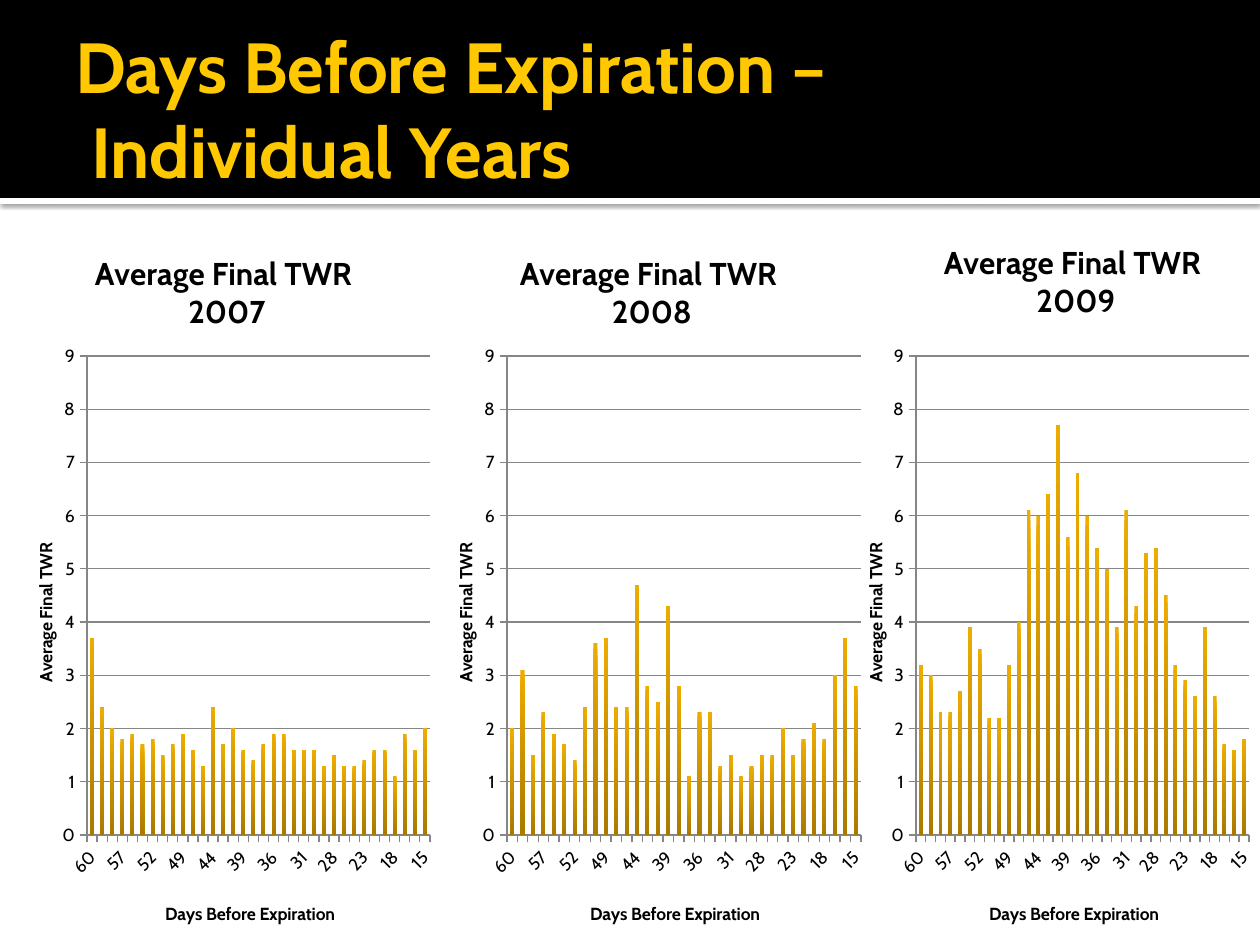
"""Builds a slide with three yearly column charts of average final TWR by days before expiration."""
import pptx
import pptx.chart.data
import pptx.dml.color
import pptx.enum.chart
import pptx.enum.shapes
import pptx.enum.text
import pptx.oxml
import pptx.oxml.ns
import pptx.util

PX = 914400 // 126
FONT = "Cabin"
BLACK, WHITE, YELLOW, GRAY = "000000", "FFFFFF", "FFC800", "868686"
BAR_TOP, BAR_BOTTOM = "EDAC00", "AA7A00"
NAMESPACES = pptx.oxml.ns.nsdecls("a", "c")

HEADING = "Days Before Expiration –\v Individual Years"
CATEGORY_TITLE, VALUE_TITLE = "Days Before Expiration", "Average Final TWR"
DAYS = [60, 59, 58, 57, 56, 53, 52, 51, 50, 49, 46, 45, 44, 43, 42, 39, 38,
        37, 36, 35, 32, 31, 30, 29, 28, 25, 24, 23, 22, 21, 18, 17, 16, 15]
CHART_TOP, CHART_HEIGHT = 220, 725
PLOT_TOP, PLOT_HEIGHT = 356, 479
VALUE_TITLE_TOP, CATEGORY_TITLE_TOP = 540, 898

CHARTS = [
    {"year": 2009, "left": 829, "width": 431, "plot": (916, 333),
     "title": (940, 238), "value_title": 860, "category_title": 986,
     "values": [3.2, 3, 2.3, 2.3, 2.7, 3.9, 3.5, 2.2, 2.2, 3.2, 4, 6.1, 6, 6.4, 7.7, 5.6, 6.8,
                6, 5.4, 5, 3.9, 6.1, 4.3, 5.3, 5.4, 4.5, 3.2, 2.9, 2.6, 3.9, 2.6, 1.7, 1.6, 1.8]},
    {"year": 2008, "left": 420, "width": 451, "plot": (507, 354),
     "title": (516, 249), "value_title": 450, "category_title": 587,
     "values": [2, 3.1, 1.5, 2.3, 1.9, 1.7, 1.4, 2.4, 3.6, 3.7, 2.4, 2.4, 4.7, 2.8, 2.5, 4.3, 2.8,
                1.1, 2.3, 2.3, 1.3, 1.5, 1.1, 1.3, 1.5, 1.5, 2, 1.5, 1.8, 2.1, 1.8, 3, 3.7, 2.8]},
    {"year": 2007, "left": 0, "width": 441, "plot": (87, 343),
     "title": (91, 249), "value_title": 30, "category_title": 162,
     "values": [3.7, 2.4, 2, 1.8, 1.9, 1.7, 1.8, 1.5, 1.7, 1.9, 1.6, 1.3, 2.4, 1.7, 2, 1.6, 1.4,
                1.7, 1.9, 1.9, 1.6, 1.6, 1.6, 1.3, 1.5, 1.3, 1.3, 1.4, 1.6, 1.6, 1.1, 1.9, 1.6, 2]},
]


def color(value):
    return pptx.dml.color.RGBColor.from_string(value)


def box(*lengths):
    return [length * PX for length in lengths]


def style(font, size, bold):
    font.name, font.size, font.bold = FONT, pptx.util.Pt(size), bold
    font.color.rgb = color(BLACK)


def add_band(slide, top, height, fill):
    band = slide.shapes.add_shape(pptx.enum.shapes.MSO_SHAPE.RECTANGLE, *box(0, top, 1260, height))
    band.shadow.inherit = False
    band.fill.solid()
    band.fill.fore_color.rgb = color(fill)
    band.line.fill.background()
    return band


def add_shadow(shape):
    effects = shape._element.spPr.find(pptx.oxml.ns.qn("a:effectLst"))
    effects.append(pptx.oxml.parse_xml(
        f'<a:outerShdw {NAMESPACES} blurRad="31750" dist="10160" dir="5400000" rotWithShape="0">'
        '<a:srgbClr val="000000"><a:alpha val="60000"/></a:srgbClr></a:outerShdw>'))


def add_heading(slide):
    heading = slide.shapes.add_textbox(*box(63, 21, 1134, 173))
    frame = heading.text_frame
    frame.word_wrap = True
    frame.vertical_anchor = pptx.enum.text.MSO_ANCHOR.MIDDLE
    frame.margin_left = pptx.util.Inches(0.1)
    frame.margin_right = pptx.util.Inches(0.05)
    frame.text = HEADING
    paragraph = frame.paragraphs[0]
    style(paragraph.font, 40.5, True)
    paragraph.font.color.rgb = color(YELLOW)


def make_layout(info, left, top, size=None):
    """Return a manual layout, in fractions of the chart, for a place on the slide."""
    parts = {"x": (left - info["left"]) / info["width"], "y": (top - CHART_TOP) / CHART_HEIGHT}
    modes = '<c:xMode val="edge"/><c:yMode val="edge"/>'
    if size:
        modes = '<c:layoutTarget val="inner"/>' + modes
        parts.update(w=size[0] / info["width"], h=size[1] / CHART_HEIGHT)
    values = "".join(f'<c:{name} val="{value:.4f}"/>' for name, value in parts.items())
    return pptx.oxml.parse_xml(
        f"<c:layout {NAMESPACES}><c:manualLayout>{modes}{values}</c:manualLayout></c:layout>")


def set_title(title, text, size, layout):
    title.text_frame.text = text
    for paragraph in title.text_frame.paragraphs:
        style(paragraph.font, size, True)
    element = title._element
    for old in element.findall(pptx.oxml.ns.qn("c:layout")):
        element.remove(old)
    element.find(pptx.oxml.ns.qn("c:tx")).addnext(layout)


def style_axis(axis):
    axis.major_tick_mark = pptx.enum.chart.XL_TICK_MARK.OUTSIDE
    axis.format.line.color.rgb = color(GRAY)
    style(axis.tick_labels.font, 10, False)


def add_year_chart(slide, info):
    data = pptx.chart.data.CategoryChartData()
    data.categories = [str(day) for day in DAYS]
    data.add_series("Series 1", info["values"])
    chart = slide.shapes.add_chart(
        pptx.enum.chart.XL_CHART_TYPE.COLUMN_CLUSTERED,
        *box(info["left"], CHART_TOP, info["width"], CHART_HEIGHT), data).chart
    style(chart.font, 10, False)
    chart.has_legend = False
    set_title(chart.chart_title, f"{VALUE_TITLE}\n {info['year']}", 18,
              make_layout(info, *info["title"]))

    plot = chart.plots[0]
    plot.vary_by_categories = False
    plot.gap_width = 150
    fill = plot.series[0].format.fill
    fill.gradient()
    fill.gradient_angle = 270
    for stop, shade in zip(fill.gradient_stops, (BAR_TOP, BAR_BOTTOM)):
        stop.color.rgb = color(shade)

    days, average = chart.category_axis, chart.value_axis
    style_axis(days)
    style_axis(average)
    average.minimum_scale, average.maximum_scale, average.major_unit = 0, 9, 1
    average.major_gridlines.format.line.color.rgb = color(GRAY)
    set_title(days.axis_title, CATEGORY_TITLE, 10,
              make_layout(info, info["category_title"], CATEGORY_TITLE_TOP))
    set_title(average.axis_title, VALUE_TITLE, 10,
              make_layout(info, info["value_title"], VALUE_TITLE_TOP))
    average.axis_title.text_frame._txBody.bodyPr.set("rot", "-5400000")

    axis = days._element
    axis.find(pptx.oxml.ns.qn("c:txPr")).bodyPr.set("rot", "-2700000")
    axis.find(pptx.oxml.ns.qn("c:noMultiLvlLbl")).addprevious(
        pptx.oxml.parse_xml(f'<c:tickLblSkip {NAMESPACES} val="3"/>'))
    area = chart._chartSpace.chart.plotArea
    for old in area.findall(pptx.oxml.ns.qn("c:layout")):
        area.remove(old)
    left, width = info["plot"]
    area.insert(0, make_layout(info, left, PLOT_TOP, (width, PLOT_HEIGHT)))


def main():
    presentation = pptx.Presentation()
    presentation.slide_width, presentation.slide_height = box(1260, 945)
    slide = presentation.slides.add_slide(presentation.slide_layouts[6])
    add_shadow(add_band(slide, 198, 6, WHITE))
    add_band(slide, 0, 198, BLACK)
    add_heading(slide)
    for info in CHARTS:
        add_year_chart(slide, info)
    presentation.save("out.pptx")


if __name__ == "__main__":
    main()
